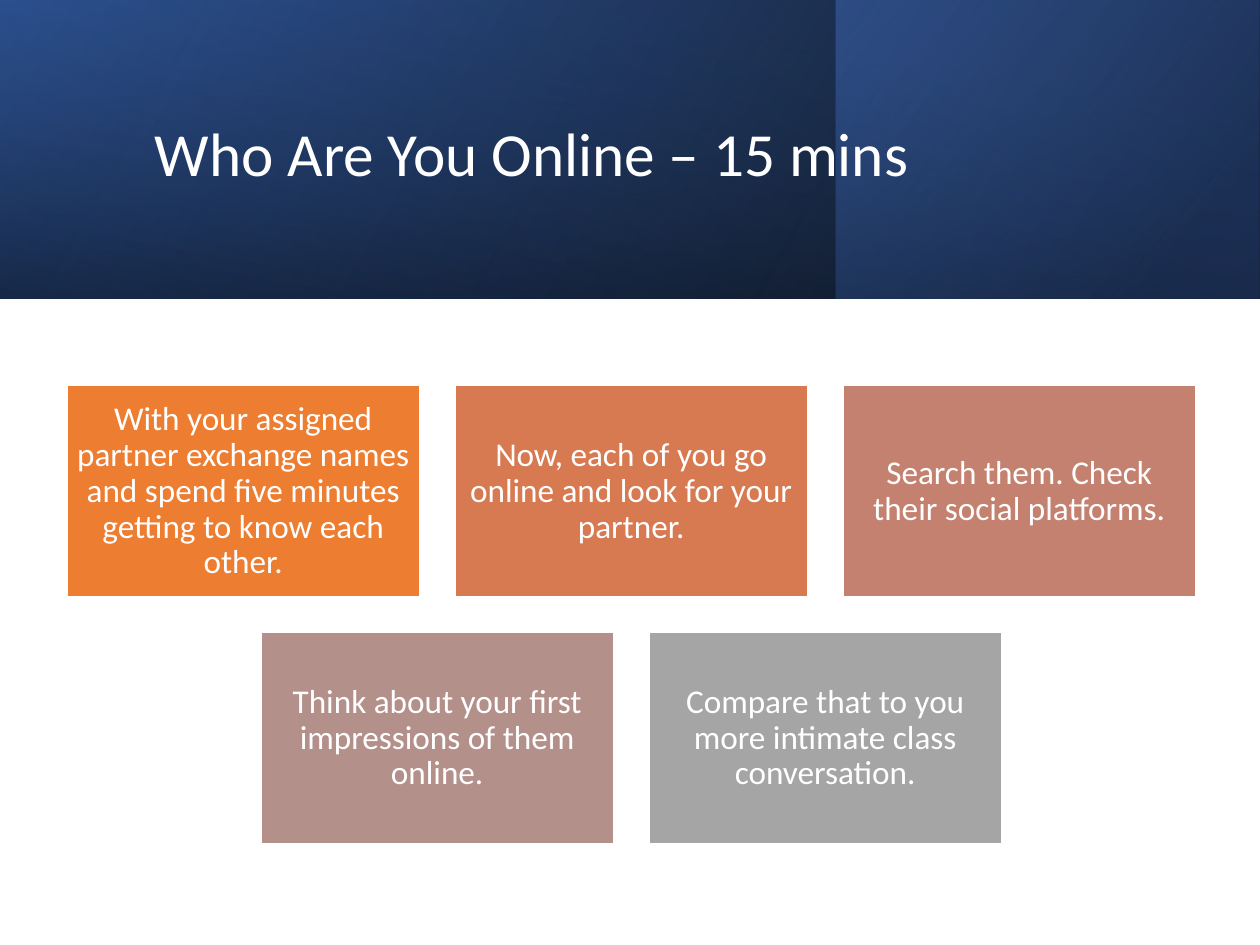
from lxml import etree
from pptx import Presentation
from pptx import util as u
from pptx.dml.color import RGBColor
from pptx.enum import shapes, text
from pptx.oxml.ns import qn

COLORS = {
    "white": "FFFFFF",
    "black": "000000",
    "blue": "2F5597",
    "navy": "203864",
    "bright": "4472C4",
    "orange": "ED7D31",
    "copper": "D87A51",
    "clay": "C48170",
    "rose": "B4908B",
    "gray": "A5A5A5",
}
FONT = "Calibri"
TITLE = "Who Are You Online – 15 mins"
ROWS = [
    [
        ("With your assigned partner exchange names and spend five minutes "
         "getting to know each other.", "orange"),
        ("Now, each of you go online and look for your partner.", "copper"),
        ("Search them. Check their social platforms.", "clay"),
    ],
    [
        ("Think about your first impressions of them online.", "rose"),
        ("Compare that to you more intimate class conversation.", "gray"),
    ],
]


def color(name):
    return RGBColor.from_string(COLORS[name])


def set_all(target, values):
    for name, value in values.items():
        setattr(target, name, value)


def write(shape, wording, size, alignment, inset):
    frame = shape.text_frame
    set_all(frame, {
        "word_wrap": True,
        "vertical_anchor": text.MSO_ANCHOR.MIDDLE,
        **{f"margin_{side}": u.Pt(inset)
           for side in ("left", "top", "right", "bottom")},
    })
    paragraph = frame.paragraphs[0]
    set_all(paragraph, {"alignment": alignment, "line_spacing": 0.9})
    run = paragraph.add_run()
    run.text = wording
    set_all(run.font, {"size": u.Pt(size), "name": FONT})
    run.font.color.rgb = color("white")


def add_rectangle(slide, box):
    shape = slide.shapes.add_shape(
        shapes.MSO_SHAPE.RECTANGLE, *(u.Pt(length) for length in box))
    shape.shadow.inherit = False
    return shape


def add_gradient(slide, box, angle, stops, rotation=0):
    """Mirrored rectangle; each stop is (position %, color, opacity %)."""
    shape = add_rectangle(slide, box)
    shape.rotation = rotation
    shape.element.spPr.find(qn("a:xfrm")).set("flipH", "1")
    shape.line.fill.background()
    shape.fill.gradient()
    shape.fill.gradient_angle = angle
    for stop, (position, name, _) in zip(shape.fill.gradient_stops, stops):
        stop.position = position / 100
        stop.color.rgb = color(name)
    fills = shape.element.spPr.iter(qn("a:srgbClr"))
    for fill, (_, _, opacity) in zip(list(fills), stops):
        etree.SubElement(fill, qn("a:alpha")).set("val", str(opacity * 1000))


def add_header(slide, left, top, width, height):
    add_gradient(slide, (left, top, width, height), 30,
                 [(0, "black", 96), (100, "blue", 100)])
    add_gradient(slide, (left + 477.5, top, 242, height), 40,
                 [(19, "navy", 68), (100, "bright", 48)])
    # Turned a quarter, this upright rectangle covers the whole header.
    shift = (width - height) / 2
    add_gradient(slide, (left + shift, top - shift, height, width), 10,
                 [(23, "blue", 16), (99, "black", 45)], rotation=270)
    title = slide.shapes.add_textbox(
        u.Pt(left + 81.4), u.Pt(top + 27.4), u.Pt(574), u.Pt(124))
    write(title, TITLE, 35, text.PP_ALIGN.LEFT, 7.2)


def add_cards(slide, left, top, width, height, gap=20.2):
    """Rows of equal cards, each row centred in the box."""
    columns = max(len(row) for row in ROWS)
    card_width = (width - gap * (columns - 1)) / columns
    card_height = (height - gap * (len(ROWS) - 1)) / len(ROWS)
    for row_index, row in enumerate(ROWS):
        indent = (columns - len(row)) * (card_width + gap) / 2
        for column, (wording, fill) in enumerate(row):
            card = add_rectangle(slide, (
                left + indent + column * (card_width + gap),
                top + row_index * (card_height + gap),
                card_width, card_height))
            card.fill.solid()
            card.fill.fore_color.rgb = color(fill)
            card.line.color.rgb = color("white")
            card.line.width = u.Pt(1)
            write(card, wording, 19, text.PP_ALIGN.CENTER, 5.7)


def main():
    presentation = Presentation()
    set_all(presentation,
            {"slide_width": u.Pt(720), "slide_height": u.Pt(540)})
    slide = presentation.slides.add_slide(presentation.slide_layouts[6])
    add_header(slide, 0, 0, 720, 170.8)
    add_cards(slide, 38.2, 220.3, 645, 262)
    presentation.save("out.pptx")


if __name__ == "__main__":
    main()
